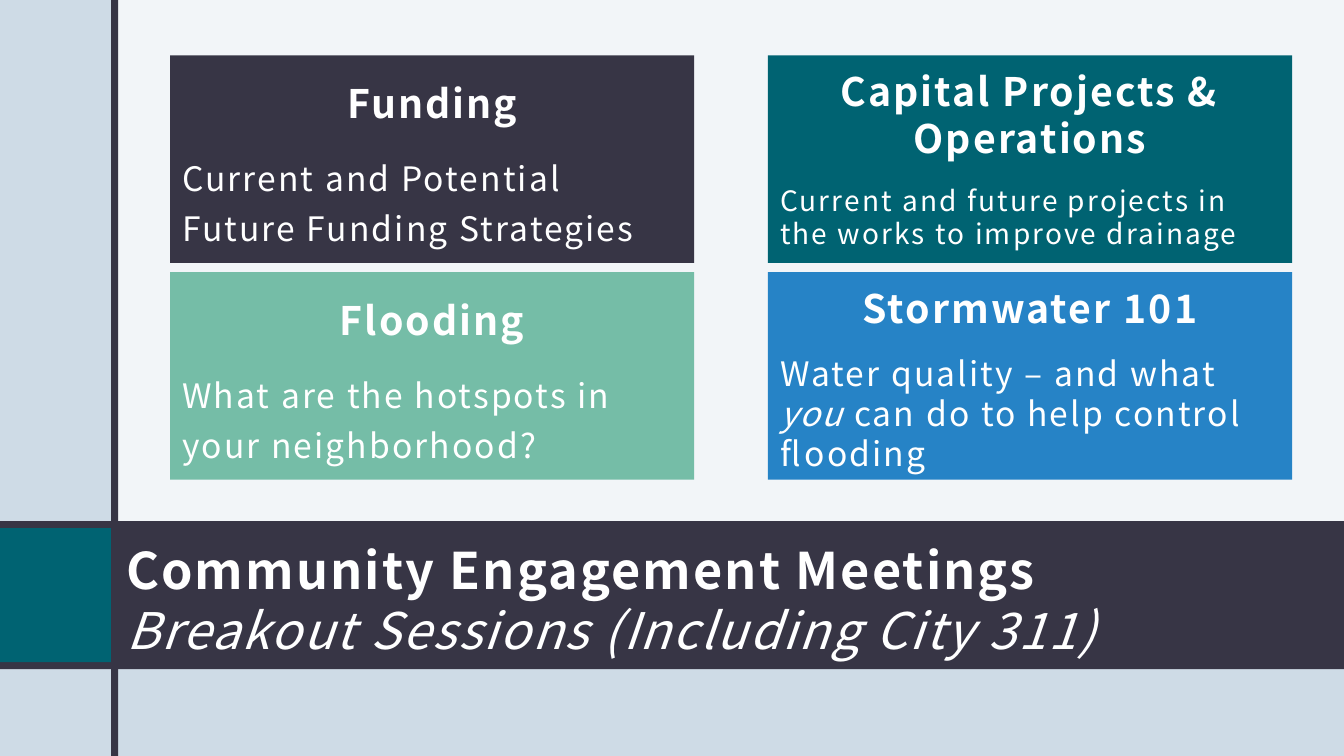
import pptx
import pptx.dml.color
import pptx.enum.shapes
import pptx.enum.text
import pptx.util
from lxml import etree
from pptx.oxml.ns import qn

Pt = pptx.util.Pt
ALIGN = pptx.enum.text.PP_ALIGN
ANCHOR = pptx.enum.text.MSO_ANCHOR
FONT = "Noto Sans CJK JP"
COLORS = {
    "background": "CEDBE6",
    "white": "FFFFFF",
    "dark": "373545",
    "teal": "006372",
    "green": "75BDA7",
    "blue": "2683C6",
}
SLIDE_W, SLIDE_H = 960, 540
CARD_W, CARD_H = 374.4, 148.3
CARD_LEFT, CARD_TOP = 121.5, 39.6
CARD_STEP_X, CARD_STEP_Y = 427.1, 154.8

# Heading, description runs as (text, italic), description size, line spacing, fill
SESSIONS = [
    ("Funding", [("Current and Potential Future Funding Strategies", False)],
     24, 1.25, "dark"),
    ("Capital Projects & Operations",
     [("Current and future projects in the works to improve drainage", False)],
     20, 1.0, "teal"),
    ("Flooding", [("What are the hotspots in your neighborhood?", False)],
     24, 1.25, "green"),
    ("Stormwater 101",
     [("Water quality – and what ", False), ("you", True),
      (" can do to help control flooding", False)],
     24, 1.0, "blue"),
]


def rgb(name):
    return pptx.dml.color.RGBColor.from_string(COLORS[name])


def add_block(slide, left, top, width, height, color):
    block = slide.shapes.add_shape(
        pptx.enum.shapes.MSO_SHAPE.RECTANGLE,
        Pt(left), Pt(top), Pt(width), Pt(height))
    block.shadow.inherit = False
    block.fill.solid()
    block.fill.fore_color.rgb = rgb(color)
    block.line.fill.background()
    return block


def set_up_frame(frame, anchor, top_inset):
    frame.word_wrap = True
    frame.vertical_anchor = anchor
    frame.margin_left = frame.margin_right = Pt(8.64)
    frame.margin_top, frame.margin_bottom = Pt(top_inset), Pt(7.2)


def style_run(run, size, bold=False, italic=False):
    """Apply the slide's font with 1.5 pt letter spacing."""
    run.font.name = FONT
    run.font.size = Pt(size)
    run.font.bold = bold
    run.font.italic = italic
    run.font.color.rgb = rgb("white")
    run.font._element.set("spc", "150")


def add_backdrop(slide, band_top, band_height, rail_left):
    """Pale panel above the title band, with the teal tab and the vertical rail."""
    slide.background.fill.solid()
    slide.background.fill.fore_color.rgb = rgb("background")
    panel_left = rail_left + 2.5
    panel = add_block(slide, panel_left, 0, SLIDE_W - panel_left, band_top, "white")
    panel_color = panel.fill._xPr.find(qn("a:solidFill"))[0]
    etree.SubElement(panel_color, qn("a:alpha")).set("val", "75000")
    add_block(slide, 0, band_top, SLIDE_W, band_height, "dark")
    add_block(slide, 0, band_top + 5, rail_left, band_height - 10, "teal")
    add_block(slide, rail_left, 0, 5, SLIDE_H, "dark")


def add_title(slide, left, top, width, height):
    title = slide.shapes.add_textbox(Pt(left), Pt(top), Pt(width), Pt(height))
    set_up_frame(title.text_frame, ANCHOR.MIDDLE, 14.4)
    heading = title.text_frame.paragraphs[0]
    heading.text = "Community Engagement Meetings\vBreakout Sessions (Including City 311)"
    meeting, subtitle = heading.runs
    style_run(meeting, 36, bold=True)
    style_run(subtitle, 36, italic=True)


def add_session_card(slide, left, top, session):
    heading_text, description_runs, size, line_spacing, color = session
    frame = add_block(slide, left, top, CARD_W, CARD_H, color).text_frame
    set_up_frame(frame, ANCHOR.TOP, 8.64)

    heading = frame.paragraphs[0]
    heading.text = heading_text
    heading.alignment = ALIGN.CENTER
    style_run(heading.runs[0], 28, bold=True)

    description = frame.add_paragraph()
    description.alignment = ALIGN.LEFT
    description.space_before = Pt(9.3)
    for text, italic in description_runs:
        run = description.add_run()
        run.text = text
        style_run(run, size, italic=italic)

    for paragraph in frame.paragraphs:
        paragraph.line_spacing = line_spacing
        paragraph.space_after = Pt(6)


def main():
    deck = pptx.Presentation()
    deck.slide_width, deck.slide_height = Pt(SLIDE_W), Pt(SLIDE_H)
    slide = deck.slides.add_slide(deck.slide_layouts[6])
    add_backdrop(slide, band_top=372.2, band_height=105.8, rail_left=79.4)
    add_title(slide, 81.4, 372.2, 828, 104.4)
    for index, session in enumerate(SESSIONS):
        row, column = divmod(index, 2)
        add_session_card(slide, CARD_LEFT + column * CARD_STEP_X,
                         CARD_TOP + row * CARD_STEP_Y, session)
    deck.save("out.pptx")


if __name__ == "__main__":
    main()
